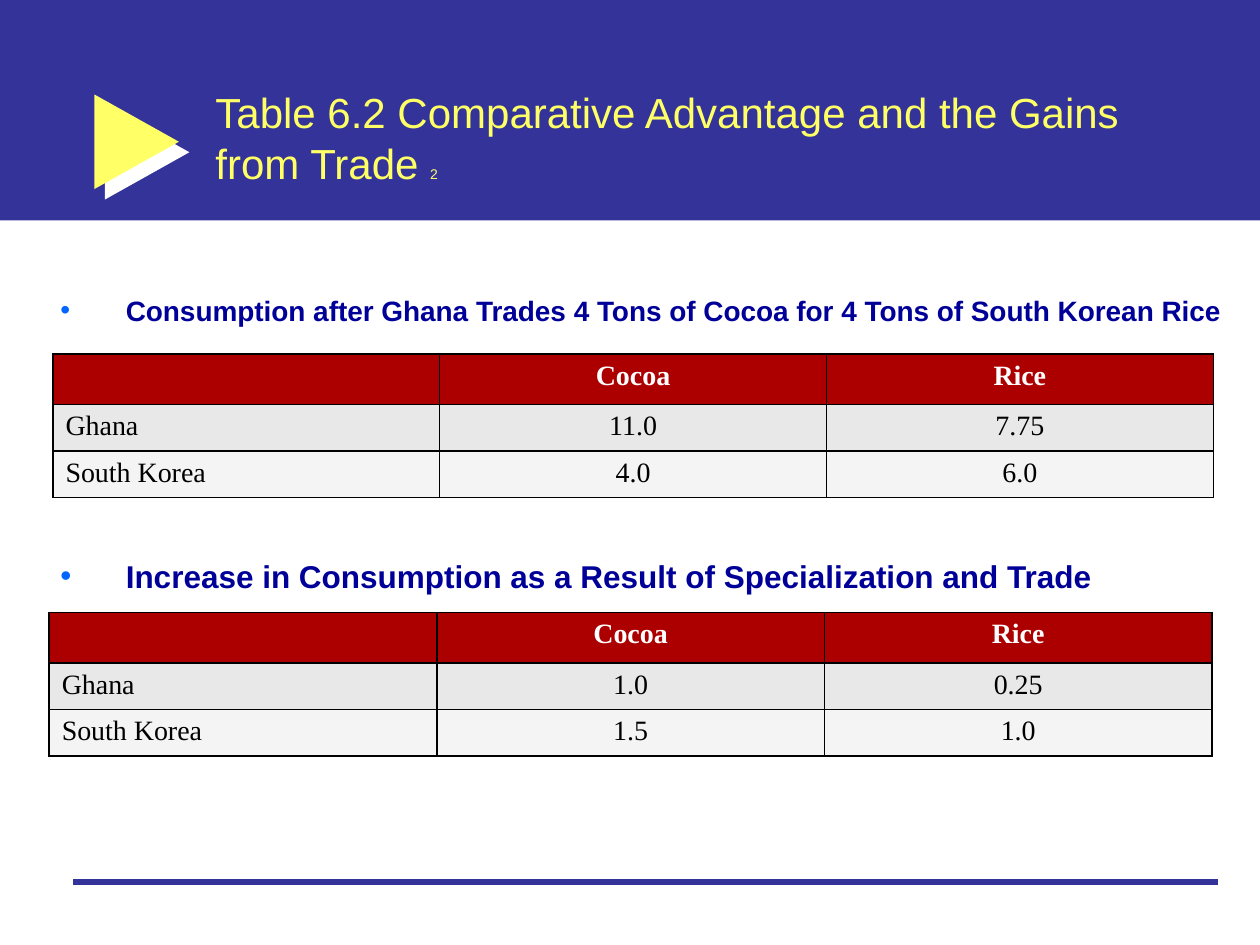
from dataclasses import dataclass

from lxml.etree import SubElement
from pptx import Presentation
from pptx.dml.color import RGBColor
from pptx.enum.shapes import MSO_CONNECTOR, MSO_SHAPE
from pptx.enum.text import MSO_ANCHOR, MSO_AUTO_SIZE, PP_ALIGN
from pptx.oxml.ns import qn
from pptx.util import Inches, Pt


@dataclass(frozen=True)
class Theme:
    band: str = "333399"
    title: str = "FFFF66"
    white: str = "FFFFFF"
    heading: str = "000099"
    bullet: str = "0066FF"
    header_row: str = "AC0000"
    body_rows: tuple = ("E8E8E8", "F4F4F4")
    black: str = "000000"
    sans: str = "Arial"
    serif: str = "Times New Roman"
    title_size: int = 24
    note_size: int = 8
    table_size: int = 16


THEME = Theme()
ROW_HEIGHT = Inches(0.37)


def rgb(value):
    return RGBColor.from_string(value)


def add_text(paragraph, text, *, size, color, font=THEME.sans, bold=False,
             align=PP_ALIGN.LEFT):
    paragraph.alignment = align
    run = paragraph.add_run()
    run.text = text
    run.font.name = font
    run.font.size = Pt(size)
    run.font.bold = bold
    run.font.color.rgb = rgb(color)


def add_solid(slide, preset, left, top, width, height, color):
    solid = slide.shapes.add_shape(
        preset, Inches(left), Inches(top), Inches(width), Inches(height))
    solid.shadow.inherit = False
    solid.fill.solid()
    solid.fill.fore_color.rgb = rgb(color)
    solid.line.fill.background()
    return solid


def add_hard_shadow(solid, color, distance):
    """Cast a sharp shadow down and to the right."""
    effects = solid._element.spPr.find(qn("a:effectLst"))
    shadow = SubElement(effects, qn("a:outerShdw"), dist=str(Pt(distance)),
                        dir="2700000", algn="ctr", rotWithShape="0")
    SubElement(shadow, qn("a:srgbClr"), val=color)


def add_rule(slide, left, right, y):
    rule = slide.shapes.add_connector(
        MSO_CONNECTOR.STRAIGHT, Inches(left), Inches(y), Inches(right), Inches(y))
    rule.line.color.rgb = rgb(THEME.band)
    rule.line.width = Pt(3)
    SubElement(rule._element.spPr, qn("a:effectLst"))


def add_title(slide, text, note):
    title = slide.shapes.title
    title.left, title.top = Inches(1.61), Inches(0.52)
    title.width, title.height = Inches(8.01), Inches(1.14)
    frame = title.text_frame
    frame.word_wrap = True
    frame.auto_size = MSO_AUTO_SIZE.NONE
    frame.vertical_anchor = MSO_ANCHOR.MIDDLE
    paragraph = frame.paragraphs[0]
    add_text(paragraph, text, size=THEME.title_size, color=THEME.title)
    add_text(paragraph, note, size=THEME.note_size, color=THEME.title)
    # Bring the title in front of the band
    slide.shapes._spTree.append(title._element)


def add_heading(slide, text, top, width, height, size):
    box = slide.shapes.add_textbox(
        Inches(0.38), Inches(top), Inches(width), Inches(height))
    box.text_frame.word_wrap = True
    paragraph = box.text_frame.paragraphs[0]
    properties = paragraph._p.get_or_add_pPr()
    indent = Inches(0.52)
    properties.set("marL", str(indent))
    properties.set("indent", str(-indent))
    bullet_color = SubElement(properties, qn("a:buClr"))
    SubElement(bullet_color, qn("a:srgbClr"), val=THEME.bullet)
    SubElement(properties, qn("a:buFont"), typeface=THEME.sans)
    SubElement(properties, qn("a:buChar"), char="•")
    add_text(paragraph, text, size=size, color=THEME.heading, bold=True)


def style_cell(cell, fill):
    properties = cell._tc.get_or_add_tcPr()
    for side in ("lnL", "lnR", "lnT", "lnB"):
        border = SubElement(properties, qn(f"a:{side}"), w=str(Pt(1)))
        border_fill = SubElement(border, qn("a:solidFill"))
        SubElement(border_fill, qn("a:srgbClr"), val=THEME.black)
    cell.fill.solid()
    cell.fill.fore_color.rgb = rgb(fill)


def add_trade_table(slide, rows, left, top, width):
    table = slide.shapes.add_table(
        len(rows), len(rows[0]), Inches(left), Inches(top),
        Inches(width), ROW_HEIGHT * len(rows)).table
    table.horz_banding = False
    fills = (THEME.header_row, *THEME.body_rows)
    for r, (values, fill) in enumerate(zip(rows, fills)):
        table.rows[r].height = ROW_HEIGHT
        header = r == 0
        for c, value in enumerate(values):
            cell = table.cell(r, c)
            style_cell(cell, fill)
            if value:
                add_text(cell.text_frame.paragraphs[0], value,
                         size=THEME.table_size, font=THEME.serif, bold=header,
                         color=THEME.white if header else THEME.black,
                         align=PP_ALIGN.CENTER if c else PP_ALIGN.LEFT)


def main():
    deck = Presentation()
    deck.slide_width, deck.slide_height = Inches(10), Inches(7.5)
    slide = deck.slides.add_slide(deck.slide_layouts[5])

    # Title band, pointer and footer rule
    add_solid(slide, MSO_SHAPE.RECTANGLE, 0, 0, 10, 1.75, THEME.band)
    pointer = add_solid(slide, MSO_SHAPE.RIGHT_ARROW, 0.75, 0.75, 0.67, 0.75,
                        THEME.title)
    pointer.adjustments[0] = 0.38
    pointer.adjustments[1] = 1
    add_hard_shadow(pointer, THEME.white, 8.5)
    add_rule(slide, 0.58, 9.67, 7)
    add_title(slide, "Table 6.2 Comparative Advantage and the Gains from Trade ", "2")

    # Consumption after trade
    columns = ("", "Cocoa", "Rice")
    add_heading(slide, "Consumption after Ghana Trades 4 Tons of Cocoa "
                "for 4 Tons of South Korean Rice", 2.28, 9.51, 0.47, 16)
    add_trade_table(slide, (columns, ("Ghana", "11.0", "7.75"),
                            ("South Korea", "4.0", "6.0")), 0.42, 2.81, 9.21)

    # Gains from specialization
    add_heading(slide, "Increase in Consumption as a Result of "
                "Specialization and Trade", 4.37, 9.35, 0.43, 18)
    add_trade_table(slide, (columns, ("Ghana", "1.0", "0.25"),
                            ("South Korea", "1.5", "1.0")), 0.39, 4.86, 9.23)

    deck.save("out.pptx")


if __name__ == "__main__":
    main()
